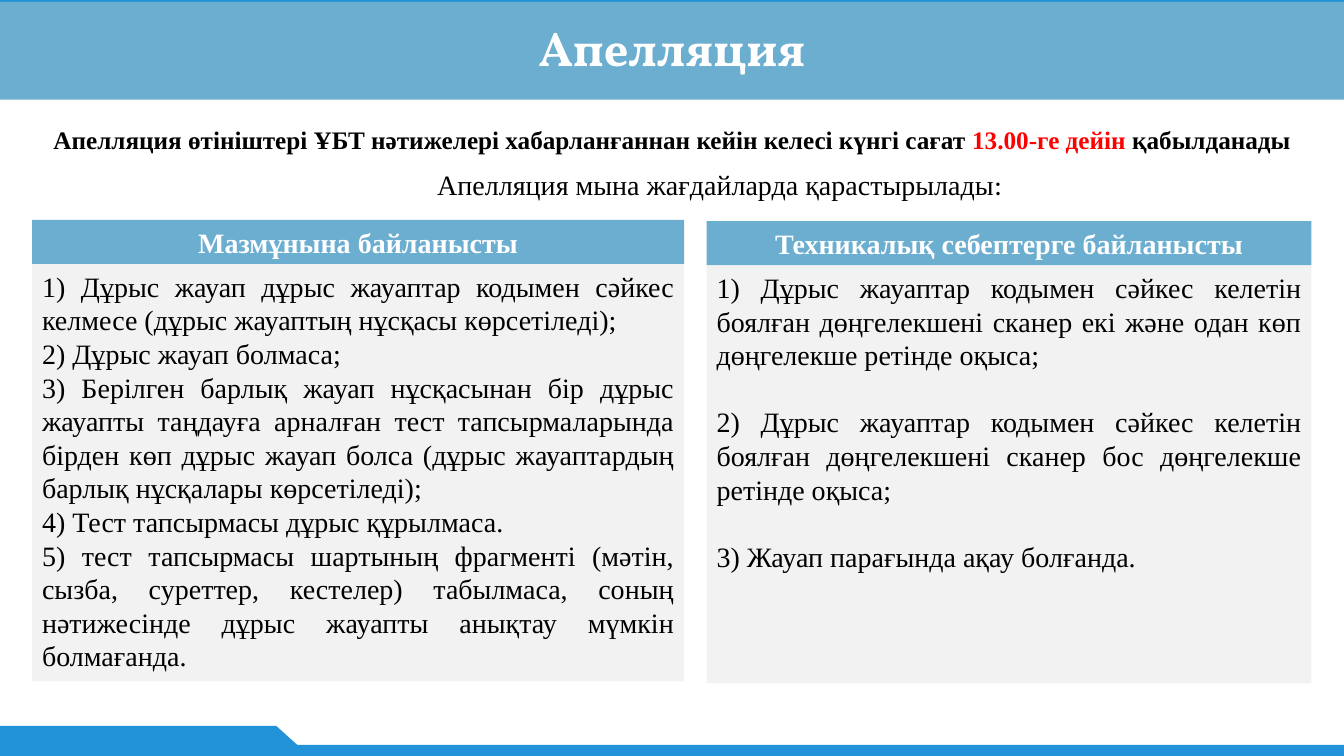
from pptx import Presentation
from pptx.dml.color import RGBColor
from pptx.enum.shapes import MSO_SHAPE as Preset
from pptx.enum.text import MSO_ANCHOR as Anchor, MSO_AUTO_SIZE as AutoSize, PP_ALIGN as Align
from pptx.util import Cm, Pt

BLUE = RGBColor(0x23, 0x93, 0xD9)
SKY = RGBColor(0x6C, 0xAE, 0xD0)
PALE = RGBColor(0xF2, 0xF2, 0xF2)
WHITE = RGBColor(0xFF, 0xFF, 0xFF)
BLACK = RGBColor(0, 0, 0)
RED = RGBColor(0xFF, 0, 0)
SERIF = "Times New Roman"
WIDTH, HEIGHT = 33.87, 19.05

CONTENT_REASONS = [
    "1) Дұрыс жауап дұрыс жауаптар кодымен сәйкес келмесе (дұрыс жауаптың нұсқасы көрсетіледі);",
    "2) Дұрыс жауап болмаса;",
    "3) Берілген барлық жауап нұсқасынан бір дұрыс жауапты таңдауға арналған тест "
    "тапсырмаларында бірден көп дұрыс жауап болса (дұрыс жауаптардың барлық нұсқалары көрсетіледі);",
    "4) Тест тапсырмасы дұрыс құрылмаса.",
    "5) тест тапсырмасы шартының фрагменті (мәтін, сызба, суреттер, кестелер) табылмаса, "
    "соның нәтижесінде дұрыс жауапты анықтау мүмкін болмағанда.",
]
TECHNICAL_REASONS = [
    "1) Дұрыс жауаптар кодымен сәйкес келетін боялған дөңгелекшені сканер екі және одан көп "
    "дөңгелекше ретінде оқыса;",
    "2) Дұрыс жауаптар кодымен сәйкес келетін боялған дөңгелекшені сканер бос дөңгелекше "
    "ретінде оқыса;",
    "3) Жауап парағында ақау болғанда.",
]


def add_block(page, left, top, width, height, color, preset=Preset.RECTANGLE):
    """Add a flat filled shape without outline or shadow."""
    block = page.shapes.add_shape(preset, Cm(left), Cm(top), Cm(width), Cm(height))
    block.shadow.inherit = False
    block.fill.solid()
    block.fill.fore_color.rgb = color
    block.line.fill.background()
    return block


def style_para(para, size, color, align, bold=False, name=SERIF):
    """Set the alignment and font of a paragraph."""
    para.alignment = align
    para.font.name = name
    para.font.size = Pt(size)
    para.font.bold = bold
    para.font.color.rgb = color


def add_frame(page, width, height):
    """Draw the strips along the slide edges and the tab at the bottom left."""
    strip, tab_height, tab_width, slope = 0.28, 0.76, 6.96, 0.84
    tab_top = height - tab_height
    add_block(page, 0, 0, width, strip, BLUE)
    add_block(page, 0, height - strip, width, strip, BLUE)
    add_block(page, 0, tab_top, tab_width, tab_height, BLUE)
    corner = add_block(page, tab_width - slope, tab_top, 2 * slope, tab_height, BLUE,
                       Preset.FLOWCHART_MERGE)
    corner.rotation = 180


def add_title(page, left, top, width, height):
    """Place the title placeholder as a band in front of the top strip."""
    title = page.shapes.title
    title.element.getparent().append(title.element)
    title.left, title.top, title.width, title.height = map(Cm, (left, top, width, height))
    title.fill.solid()
    title.fill.fore_color.rgb = SKY
    title.text = "Апелляция"
    title.text_frame.auto_size = AutoSize.NONE
    title.text_frame.vertical_anchor = Anchor.MIDDLE
    para = title.text_frame.paragraphs[0]
    style_para(para, 34.7, WHITE, Align.CENTER, True, "Vollkorn")
    para.line_spacing = 0.9


def add_intro(page, left, top, width):
    """Write the deadline line and the lead-in below it."""
    deadline = page.shapes.add_textbox(Cm(left), Cm(top), Cm(width), Cm(1.02))
    deadline.text_frame.word_wrap = True
    para = deadline.text_frame.paragraphs[0]
    style_para(para, 18, BLACK, Align.CENTER, True)
    for text, color in (
        ("Апелляция өтініштері ҰБТ нәтижелері хабарланғаннан кейін келесі күнгі сағат ", BLACK),
        ("13.00-ге дейін ", RED),
        ("қабылданады", BLACK),
    ):
        span = para.add_run()
        span.text = text
        span.font.color.rgb = color

    lead = page.shapes.add_textbox(Cm(left + 9.96), Cm(top + 1.07), Cm(14.88), Cm(1.12))
    lead.text_frame.word_wrap = False
    para = lead.text_frame.paragraphs[0]
    style_para(para, 20, BLACK, Align.LEFT)
    for text, name in (("Апелляция мына жағдайларда қарастырылады", SERIF), (":", "Calibri")):
        span = para.add_run()
        span.text = text
        span.font.name = name


def add_panel(page, left, top, width, height, heading, reasons, gap=0):
    """Build a headed panel listing reasons, with a gap in points between them."""
    header_height = 1.12
    header = add_block(page, left, top, width, header_height, SKY)
    header.text_frame.text = heading
    style_para(header.text_frame.paragraphs[0], 20, WHITE, Align.CENTER, True)

    body = add_block(page, left, top + header_height, width, height - header_height, PALE)
    frame = body.text_frame
    frame.vertical_anchor = Anchor.TOP
    frame.text = "\n".join(reasons)
    for index, para in enumerate(frame.paragraphs):
        style_para(para, 20, BLACK, Align.JUSTIFY)
        if index:
            para.space_before = Pt(gap)


def main():
    """Build the appeal slide and save it."""
    deck = Presentation()
    deck.slide_width, deck.slide_height = Cm(WIDTH), Cm(HEIGHT)
    page = deck.slides.add_slide(deck.slide_layouts[5])
    add_frame(page, WIDTH, HEIGHT)
    add_title(page, 0, 0.05, WIDTH, 2.46)
    add_intro(page, 0.81, 3.02, 32.25)
    add_panel(page, 0.81, 5.54, 16.43, 11.63, "Мазмұнына байланысты", CONTENT_REASONS)
    add_panel(page, 17.81, 5.57, 15.24, 11.65, "Техникалық себептерге байланысты",
              TECHNICAL_REASONS, gap=24)
    deck.save("out.pptx")


if __name__ == "__main__":
    main()
